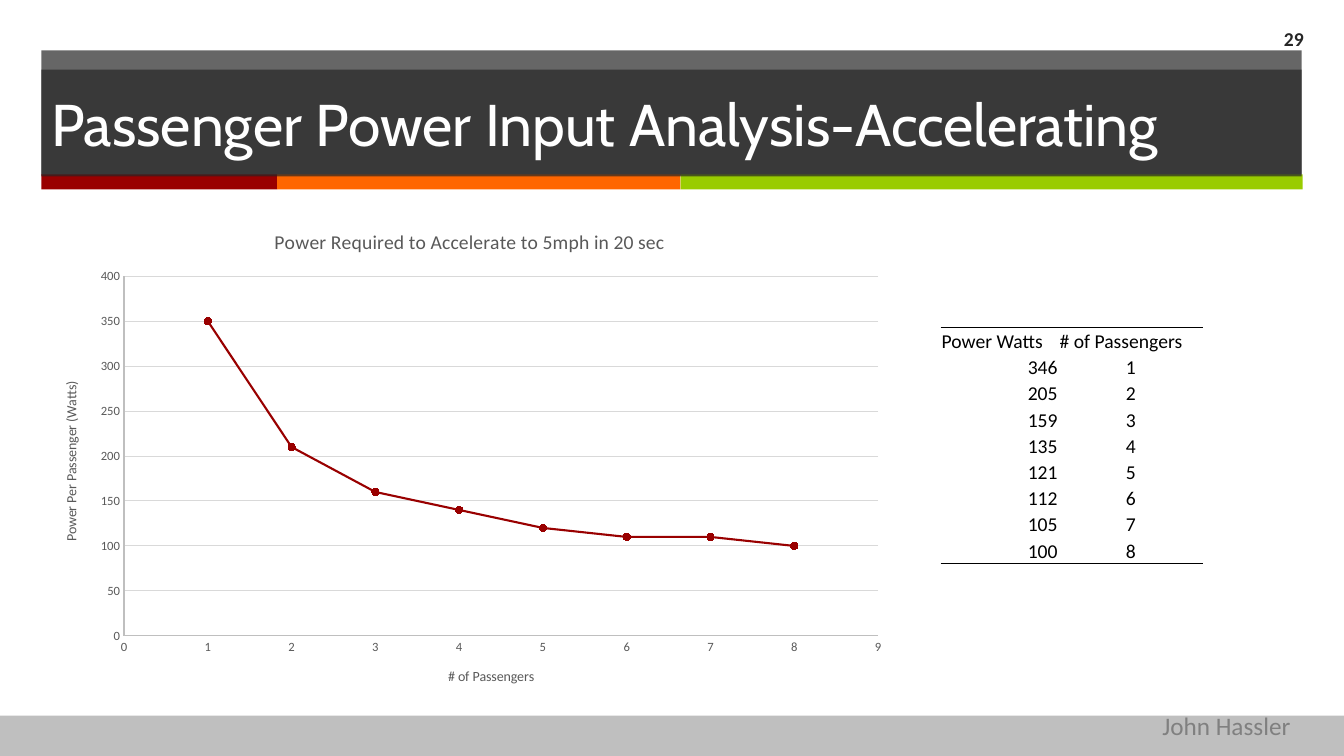
import pptx
import pptx.util
import pptx.oxml
import pptx.oxml.ns
import pptx.chart.data
import pptx.dml.color
import pptx.enum.chart
import pptx.enum.shapes
import pptx.enum.text
from pptx.util import Inches

COLORS = {"dark": "262626", "footer": "BFBFBF", "red": "990000", "orange": "FF6600",
          "green": "99CC00", "white": "FFFFFF", "black": "000000", "label": "595959",
          "grid": "D9D9D9", "author": "808080"}
ALIGN = pptx.enum.text.PP_ALIGN
ANCHOR = pptx.enum.text.MSO_ANCHOR
PLAIN_TABLE_STYLE = "{2D5ABB26-0587-4C30-8999-92F81FD0307C}"
TABLE_WATTS = [346, 205, 159, 135, 121, 112, 105, 100]
CHART_WATTS = [350, 210, 160, 140, 120, 110, 110, 100]
CHART_BOX = (0.41, 2.08, 8.5, 4.92)
PLOT_BOX = (1.23, 2.74, 7.48, 3.57)


def rgb(name):
    """Return the named colour."""
    return pptx.dml.color.RGBColor.from_string(COLORS[name])


def style_font(font, size, color, face="Calibri", bold=False):
    """Set face, size, weight and colour of a font."""
    font.name, font.size, font.bold = face, pptx.util.Pt(size), bold
    font.color.rgb = rgb(color)


def add_bar(slide, left, top, width, height, color, opacity=100):
    """Add a borderless rectangle."""
    bar = slide.shapes.add_shape(pptx.enum.shapes.MSO_SHAPE.RECTANGLE, Inches(left),
                                 Inches(top), Inches(width), Inches(height))
    bar.shadow.inherit = False
    bar.line.fill.background()
    bar.fill.solid()
    bar.fill.fore_color.rgb = rgb(color)
    if opacity < 100:
        srgb = bar.fill._xPr.find(".//" + pptx.oxml.ns.qn("a:srgbClr"))
        srgb.append(pptx.oxml.parse_xml(
            f'<a:alpha {pptx.oxml.ns.nsdecls("a")} val="{opacity * 1000}"/>'))
    return bar


def write_text(frame, text, size, color, align=ALIGN.LEFT, face="Calibri", bold=False):
    """Fill a text frame with one styled paragraph."""
    frame.text = text
    frame.paragraphs[0].alignment = align
    style_font(frame.paragraphs[0].font, size, color, face, bold)


def add_label(slide, left, top, width, height, text, size, color, wrap=True, **style):
    """Add a text box with one paragraph."""
    frame = slide.shapes.add_textbox(Inches(left), Inches(top), Inches(width),
                                     Inches(height)).text_frame
    frame.word_wrap = wrap
    frame.vertical_anchor = ANCHOR.MIDDLE if wrap else ANCHOR.TOP
    write_text(frame, text, size, color, **style)


def add_rule(cell, side):
    """Draw a thin line on the top (T) or bottom (B) of a cell."""
    cell._tc.get_or_add_tcPr().insert(0, pptx.oxml.parse_xml(
        f'<a:ln{side} {pptx.oxml.ns.nsdecls("a")} w="12700"><a:solidFill>'
        f'<a:srgbClr val="{COLORS["black"]}"/></a:solidFill></a:ln{side}>'))


def add_power_table(slide):
    """Add the table of watts for each number of passengers."""
    rows = [("Power Watts", "# of Passengers")]
    rows += [(str(watts), str(count)) for count, watts in enumerate(TABLE_WATTS, 1)]
    table = slide.shapes.add_table(len(rows), 2, Inches(9.33), Inches(3.25),
                                   Inches(2.6), Inches(2.34)).table
    table.first_row = table.horz_banding = False
    table._tbl.find(".//" + pptx.oxml.ns.qn("a:tableStyleId")).text = PLAIN_TABLE_STYLE
    for column, width in zip(table.columns, (1.17, 1.43)):
        column.width = Inches(width)
    for row_index, row in enumerate(rows):
        table.rows[row_index].height = Inches(0.26)
        for column_index, text in enumerate(row):
            cell = table.cell(row_index, column_index)
            cell.fill.background()
            cell.margin_left = cell.margin_right = cell.margin_top = Inches(0.01)
            cell.margin_bottom = 0
            cell.vertical_anchor = ANCHOR.BOTTOM
            align = (ALIGN.RIGHT, ALIGN.CENTER)[column_index] if row_index else ALIGN.LEFT
            write_text(cell.text_frame, text, 14, "black", align)
            if row_index == 0:
                add_rule(cell, "T")
            elif row_index == len(rows) - 1:
                add_rule(cell, "B")


def style_axis(axis, title, maximum, step):
    """Set scale, title and look of a chart axis."""
    axis.minimum_scale, axis.maximum_scale, axis.major_unit = 0, maximum, step
    axis.major_tick_mark = axis.minor_tick_mark = pptx.enum.chart.XL_TICK_MARK.NONE
    axis.has_major_gridlines = False
    axis.format.line.color.rgb = rgb("footer")
    axis.format.line.width = pptx.util.Pt(0.75)
    style_font(axis.tick_labels.font, 9, "label")
    write_text(axis.axis_title.text_frame, title, 10, "label", ALIGN.CENTER)


def place_plot(chart):
    """Fix the inner plot area within the chart."""
    plot_area = chart._chartSpace.chart.plotArea
    for layout in plot_area.findall(pptx.oxml.ns.qn("c:layout")):
        plot_area.remove(layout)
    chart_left, chart_top, chart_width, chart_height = CHART_BOX
    left, top, width, height = PLOT_BOX
    fractions = {"x": (left - chart_left) / chart_width, "y": (top - chart_top) / chart_height,
                 "w": width / chart_width, "h": height / chart_height}
    sizes = "".join(f'<c:{key} val="{value:.4f}"/>' for key, value in fractions.items())
    plot_area.insert(0, pptx.oxml.parse_xml(
        f'<c:layout {pptx.oxml.ns.nsdecls("c")}><c:manualLayout>'
        '<c:layoutTarget val="inner"/><c:xMode val="edge"/><c:yMode val="edge"/>'
        f'{sizes}</c:manualLayout></c:layout>'))


def add_power_chart(slide):
    """Add the chart of power against passengers."""
    data = pptx.chart.data.XyChartData()
    points = data.add_series("Series 1")
    for count, watts in enumerate(CHART_WATTS, 1):
        points.add_data_point(count, watts)
    chart = slide.shapes.add_chart(pptx.enum.chart.XL_CHART_TYPE.XY_SCATTER_LINES,
                                   *map(Inches, CHART_BOX), data).chart
    style_font(chart.font, 10, "black")
    chart.has_legend = False
    chart.has_title = True
    write_text(chart.chart_title.text_frame, "Power Required to Accelerate to 5mph in 20 sec",
               14, "label", ALIGN.CENTER)
    chart.plots[0].vary_by_categories = False
    style_axis(chart.category_axis, "# of Passengers", 9, 1)
    style_axis(chart.value_axis, "Power Per Passenger (Watts)", 400, 50)
    chart.value_axis.has_major_gridlines = True
    gridline = chart.value_axis.major_gridlines.format.line
    gridline.color.rgb = rgb("grid")
    gridline.width = pptx.util.Pt(0.75)
    power = chart.plots[0].series[0]
    power.smooth = False
    power.format.line.color.rgb = rgb("red")
    power.format.line.width = pptx.util.Pt(1.5)
    power.marker.style = pptx.enum.chart.XL_MARKER_STYLE.CIRCLE
    power.marker.size = 5
    power.marker.format.fill.solid()
    power.marker.format.fill.fore_color.rgb = rgb("red")
    power.marker.format.line.color.rgb = rgb("red")
    place_plot(chart)


def main():
    """Build the slide and save it."""
    deck = pptx.Presentation()
    deck.slide_width, deck.slide_height = Inches(13.33), Inches(7.5)
    slide = deck.slides.add_slide(deck.slide_layouts[6])
    add_bar(slide, 0, 7.1, 13.33, 0.4, "footer")
    add_bar(slide, 0.41, 0.5, 12.5, 1.24, "dark", 70)
    for left, width, color in ((0.41, 2.34, "red"), (2.75, 4, "orange"),
                               (6.75, 6.17, "green")):
        add_bar(slide, left, 1.73, width, 0.15, color)
    banner = add_bar(slide, 0.41, 0.69, 12.5, 1.06, "dark", 70)
    banner.text_frame.vertical_anchor = ANCHOR.MIDDLE
    write_text(banner.text_frame, "Passenger Power Input Analysis-Accelerating", 42,
               "white", face="Cabin")
    add_label(slide, 12.11, 0.19, 0.92, 0.39, "29", 14, "dark", align=ALIGN.RIGHT, bold=True)
    add_power_table(slide)
    add_power_chart(slide)
    add_label(slide, 11.43, 7, 1.49, 0.4, "John Hassler", 18, "author", wrap=False)
    deck.save("out.pptx")


if __name__ == "__main__":
    main()
